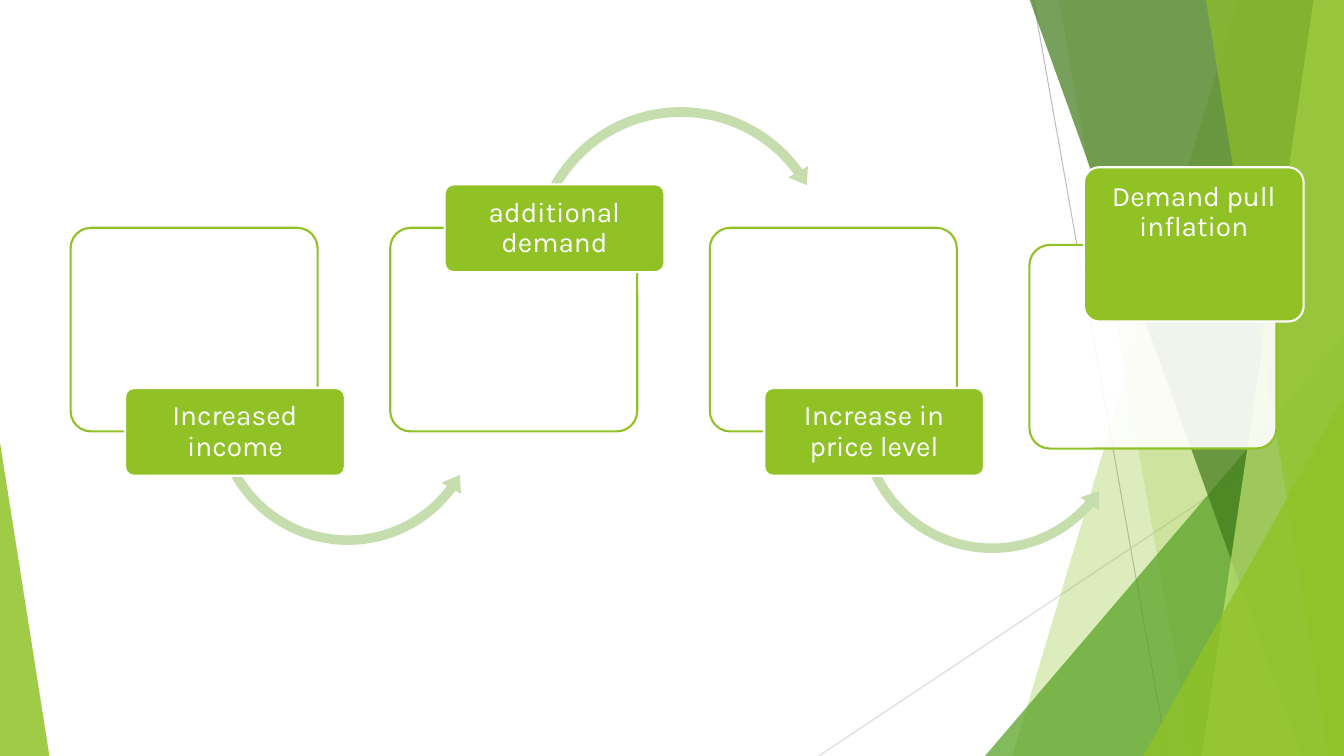
from pptx import Presentation
from pptx import util as u
from pptx.dml.color import RGBColor
from pptx.enum import shapes, text
from pptx.oxml.ns import qn
from lxml import etree

LIME = RGBColor(0x90, 0xC2, 0x26)
GRASS = RGBColor(0x54, 0xA0, 0x21)
FOREST = RGBColor(0x3F, 0x78, 0x19)
PALE = RGBColor(0xC0, 0xE4, 0x74)
SAGE = RGBColor(0xC6, 0xDD, 0xAD)
GREY = RGBColor(0xBF, 0xBF, 0xBF)
SILVER = RGBColor(0xD9, 0xD9, 0xD9)
WHITE = RGBColor(0xFF, 0xFF, 0xFF)

WIDE, HIGH = 13.33, 7.5
KIND = shapes.MSO_SHAPE
MID, TOP = text.MSO_ANCHOR.MIDDLE, text.MSO_ANCHOR.TOP


class Board:
    font, size, edge = "Karla", 20, 1.5

    def __init__(self, slide):
        self.slide = slide

    def paint(self, shape, fill, alpha=100, line=None):
        """Set fill, opacity in percent, and outline; drop the shadow."""
        shape.shadow.inherit = False
        shape.fill.solid()
        shape.fill.fore_color.rgb = fill
        if alpha < 100:
            color = shape._element.spPr.find(qn("a:solidFill"))[0]
            etree.SubElement(color, qn("a:alpha"), val=str(alpha * 1000))
        if line is None:
            shape.line.fill.background()
        else:
            shape.line.color.rgb = line
            shape.line.width = u.Pt(self.edge)
        return shape

    def shape(self, kind, box, adjust, fill, alpha=100, line=None):
        item = self.slide.shapes.add_shape(kind, *map(u.Inches, box))
        for i, value in enumerate(adjust):
            item.adjustments[i] = value
        return self.paint(item, fill, alpha, line)

    def line(self, start, end, color):
        item = self.slide.shapes.add_connector(
            shapes.MSO_CONNECTOR.STRAIGHT, *map(u.Inches, start + end))
        item.line.color.rgb = color
        item.line.width = u.Pt(0.75)
        etree.SubElement(item._element.spPr, qn("a:effectLst"))

    def facet(self, top, foot, fill, alpha):
        """Draw a band from a slanted left edge to the slide's right side."""
        points = [(top, -0.01), (WIDE, -0.01), (WIDE, HIGH), (foot, HIGH)]
        points = [(u.Inches(x), u.Inches(y)) for x, y in points]
        form = self.slide.shapes.build_freeform(*points[0])
        form.add_line_segments(points[1:], close=True)
        self.paint(form.convert_to_shape(), fill, alpha)

    def wedge(self, box, tip, fill, alpha):
        self.shape(KIND.ISOSCELES_TRIANGLE, box, [tip], fill, alpha)

    def card(self, x, y):
        self.shape(KIND.ROUNDED_RECTANGLE, (x, y, 2.45, 2.02), [0.1], WHITE, 90, LIME)

    def label(self, box, words, anchor, inset):
        item = self.shape(KIND.ROUNDED_RECTANGLE, box, [0.1], LIME, line=WHITE)
        frame = item.text_frame
        frame.word_wrap = True
        frame.vertical_anchor = anchor
        frame.margin_left = frame.margin_right = u.Inches(0.04)
        frame.margin_top, frame.margin_bottom = u.Inches(inset), u.Inches(0.03)
        para = frame.paragraphs[0]
        para.alignment = text.PP_ALIGN.CENTER
        para.line_spacing = 0.9
        run = para.add_run()
        run.text = words
        run.font.name, run.font.size = self.font, u.Pt(self.size)
        run.font.color.rgb = WHITE


def back(board):
    board.line((10.25, 0), (11.58, HIGH), GREY)
    board.line((WIDE, 4.03), (8.12, HIGH), SILVER)
    board.facet(12.28, 10.04, LIME, 30)
    board.facet(10.5, 11.83, LIME, 20)
    board.wedge((9.77, 3.33, 3.56, 4.17), 1, GRASS, 72)
    board.facet(10.21, 12.91, FOREST, 70)
    board.facet(13.03, 11.92, PALE, 70)
    board.facet(11.96, 13.18, LIME, 65)
    board.wedge((11.34, 3.93, 1.99, 3.57), 1, LIME, 80)
    board.wedge((0, 4.39, 0.49, 3.11), 0, LIME, 85)


def flow(board):
    left, right = KIND.LEFT_CIRCULAR_ARROW, KIND.CIRCULAR_ARROW
    # words, card top, label top, label height, anchor, top inset, arrow
    steps = [
        ("Increased income", 2.26, 3.85, 0.87, MID, 0.03,
         (left, (2.06, 2.69, 2.78, 2.78), (0.034, 4.249, 22.004, 90.245, 0.04))),
        ("additional demand", 2.26, 1.83, 0.87, MID, 0.03,
         (right, (5.21, 1, 3.09, 3.09), (0.031, 3.788, 194.457, 125.755, 0.036))),
        ("Increase in price level", 2.26, 3.85, 0.87, MID, 0.03,
         (left, (8.45, 2.77, 2.78, 2.78), (0.034, 4.238, 24.526, 92.778, 0.04))),
        ("Demand pull inflation", 2.43, 1.66, 1.53, TOP, 0.1, None),
    ]
    for i, (words, top, tag, tall, anchor, inset, arrow) in enumerate(steps):
        x = 0.7 + 3.17 * i
        board.card(x, top)
        if arrow:
            board.shape(*arrow, SAGE)
        board.label((x + 0.54, tag, 2.18, tall), words, anchor, inset)


def main():
    deck = Presentation()
    deck.slide_width, deck.slide_height = u.Inches(WIDE), u.Inches(HIGH)
    board = Board(deck.slides.add_slide(deck.slide_layouts[6]))
    back(board)
    flow(board)
    deck.save("out.pptx")


if __name__ == "__main__":
    main()
